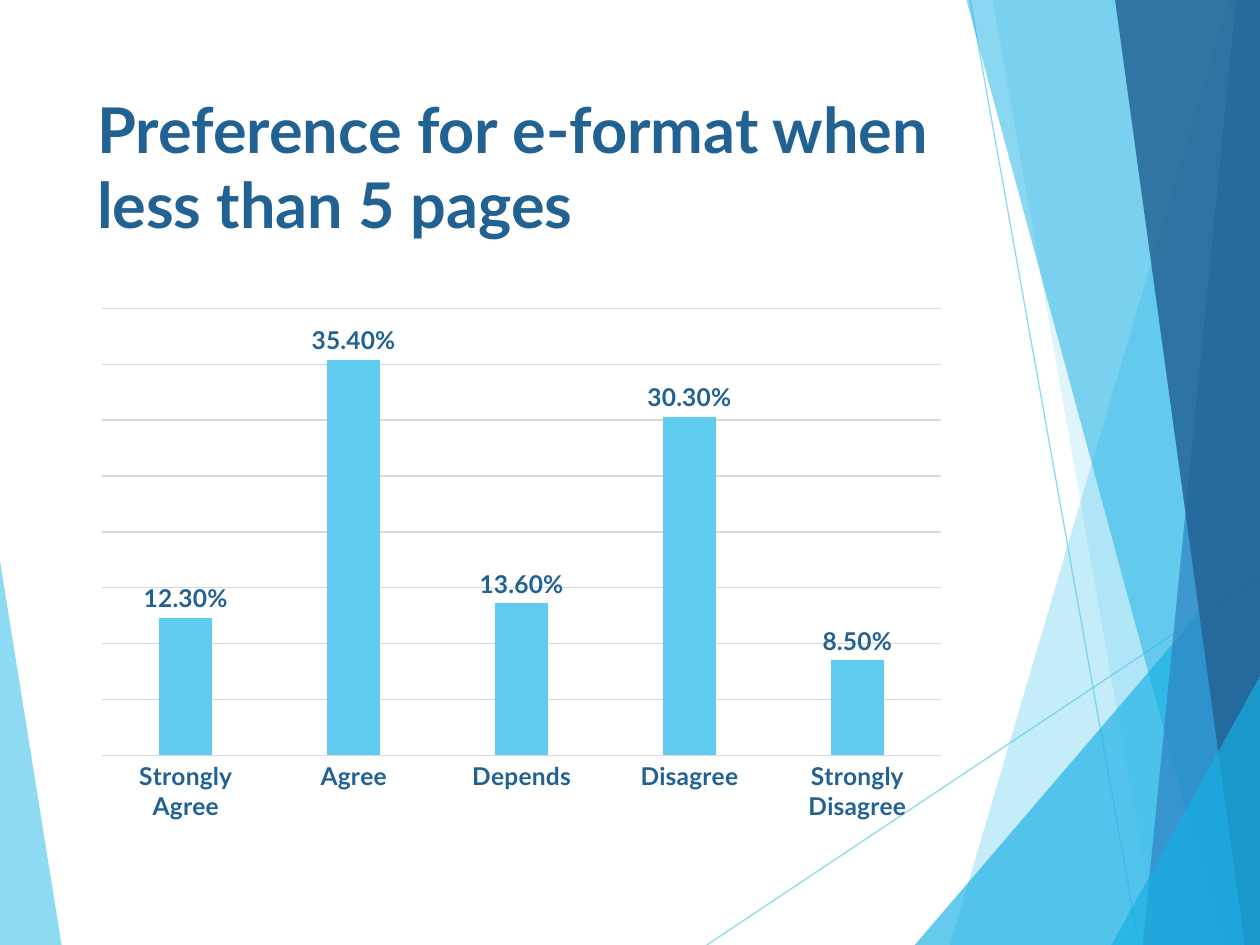
from dataclasses import dataclass

import pptx
import pptx.chart.data
import pptx.dml.color
import pptx.enum.chart
import pptx.enum.shapes
import pptx.enum.text
import pptx.oxml.ns
import pptx.util
from lxml import etree

WIDTH = pptx.util.Inches(10)
HEIGHT = pptx.util.Inches(7.5)
FONT = "Lato"
COLORS = {
    "sky": "5FCBEF",
    "cyan": "17B0E4",
    "blue": "2E83C3",
    "navy": "226292",
    "grid": "D9D9D9",
}
Point = tuple[float, float]


@dataclass(frozen=True)
class Facet:
    """A translucent polygon; corners are percentages of the slide."""
    color: str
    opacity: int
    corners: tuple[Point, ...]


@dataclass(frozen=True)
class Ray:
    """A thin translucent line; ends are percentages of the slide."""
    start: Point
    end: Point


def right_band(color: str, opacity: int, top: float, bottom: float) -> Facet:
    return Facet(color, opacity, ((top, 0), (bottom, 100), (100.1, 100), (100.1, 0)))


def right_corner(color: str, opacity: int, left: float, peak: float) -> Facet:
    return Facet(color, opacity, ((left, 100), (100.1, peak), (100.1, 100)))


BACKDROP = (
    Facet("sky", 70, ((-0.1, 58.5), (4.9, 100.1), (-0.1, 100))),
    Ray((56.1, 100), (100.1, 60.9)),
    Ray((77, 0), (90.4, 100)),
    right_band("sky", 36, 97.5, 75.4),
    right_band("sky", 20, 78.8, 91.9),
    right_corner("cyan", 66, 72.6, 57.2),
    right_band("cyan", 50, 76.7, 97),
    right_band("blue", 70, 98.1, 90.7),
    right_band("navy", 82, 88.5, 98.8),
    right_corner("cyan", 66, 88.2, 71.3),
)
RESPONSES = {
    "Strongly Agree": 0.123,
    "Agree": 0.354,
    "Depends": 0.136,
    "Disagree": 0.303,
    "Strongly Disagree": 0.085,
}


def rgb(name: str) -> pptx.dml.color.RGBColor:
    return pptx.dml.color.RGBColor.from_string(COLORS[name])


def across(percent: float) -> int:
    return round(WIDTH * percent / 100)


def down(percent: float) -> int:
    return round(HEIGHT * percent / 100)


def set_opacity(element, percent: int) -> None:
    color = element.find(".//" + pptx.oxml.ns.qn("a:srgbClr"))
    alpha = etree.SubElement(color, pptx.oxml.ns.qn("a:alpha"))
    alpha.set("val", str(percent * 1000))


def draw_facet(slide, facet: Facet) -> None:
    first, *others = [(across(x), down(y)) for x, y in facet.corners]
    builder = slide.shapes.build_freeform(*first)
    builder.add_line_segments(others, close=True)
    polygon = builder.convert_to_shape()
    polygon.shadow.inherit = False
    polygon.fill.solid()
    polygon.fill.fore_color.rgb = rgb(facet.color)
    set_opacity(polygon.element.spPr, facet.opacity)
    polygon.line.fill.background()


def draw_ray(slide, ray: Ray) -> None:
    line = slide.shapes.add_connector(
        pptx.enum.shapes.MSO_CONNECTOR.STRAIGHT,
        across(ray.start[0]), down(ray.start[1]),
        across(ray.end[0]), down(ray.end[1]),
    )
    line.line.color.rgb = rgb("sky")
    line.line.width = pptx.util.Pt(0.75)
    properties = line.element.spPr
    set_opacity(properties, 70)
    etree.SubElement(properties, pptx.oxml.ns.qn("a:effectLst"))


def style_font(font, size: float) -> None:
    font.name = FONT
    font.size = pptx.util.Pt(size)
    font.bold = True
    font.color.rgb = rgb("navy")


def style_rule(line) -> None:
    line.color.rgb = rgb("grid")
    line.width = pptx.util.Pt(0.75)


def write_title(slide, wording: str) -> None:
    title = slide.shapes.title
    title.left, title.top = across(6.7), down(8.9)
    title.width, title.height = across(69.4), down(19.2)
    frame = title.text_frame
    frame.word_wrap = True
    frame.auto_size = pptx.enum.text.MSO_AUTO_SIZE.NONE
    frame.vertical_anchor = pptx.enum.text.MSO_ANCHOR.TOP
    paragraph = frame.paragraphs[0]
    paragraph.alignment = pptx.enum.text.PP_ALIGN.LEFT
    run = paragraph.add_run()
    run.text = wording
    style_font(run.font, 36)
    # Bring the title in front of the backdrop.
    title.element.getparent().append(title.element)


def draw_responses(slide) -> None:
    survey = pptx.chart.data.CategoryChartData(number_format="0.00%")
    survey.categories = list(RESPONSES)
    survey.add_series("Series 1", list(RESPONSES.values()))
    chart = slide.shapes.add_chart(
        pptx.enum.chart.XL_CHART_TYPE.COLUMN_CLUSTERED,
        across(6.7), down(31.5), across(69.4), down(56.5), survey,
    ).chart
    chart.has_title = False
    chart.has_legend = False
    chart.font.name = FONT
    chart.font.size = pptx.util.Pt(10)

    answers = chart.category_axis
    answers.major_tick_mark = pptx.enum.chart.XL_TICK_MARK.NONE
    style_font(answers.tick_labels.font, 14)
    style_rule(answers.format.line)

    share = chart.value_axis
    share.visible = False
    share.minimum_scale, share.maximum_scale, share.major_unit = 0, 0.4, 0.05
    share.has_major_gridlines = True
    style_rule(share.major_gridlines.format.line)

    plot = chart.plots[0]
    plot.gap_width, plot.overlap = 219, -27
    plot.vary_by_categories = False
    columns = plot.series[0]
    columns.format.fill.solid()
    columns.format.fill.fore_color.rgb = rgb("sky")
    labels = columns.data_labels
    labels.show_value = True
    labels.position = pptx.enum.chart.XL_LABEL_POSITION.OUTSIDE_END
    labels.number_format = "0.00%"
    labels.number_format_is_linked = False
    style_font(labels.font, 14)


def main() -> None:
    deck = pptx.Presentation()
    deck.slide_width, deck.slide_height = WIDTH, HEIGHT
    slide = deck.slides.add_slide(deck.slide_layouts.get_by_name("Title Only"))
    for piece in BACKDROP:
        if isinstance(piece, Facet):
            draw_facet(slide, piece)
        else:
            draw_ray(slide, piece)
    write_title(slide, "Preference for e-format when less than 5 pages")
    draw_responses(slide)
    deck.save("out.pptx")


if __name__ == "__main__":
    main()
